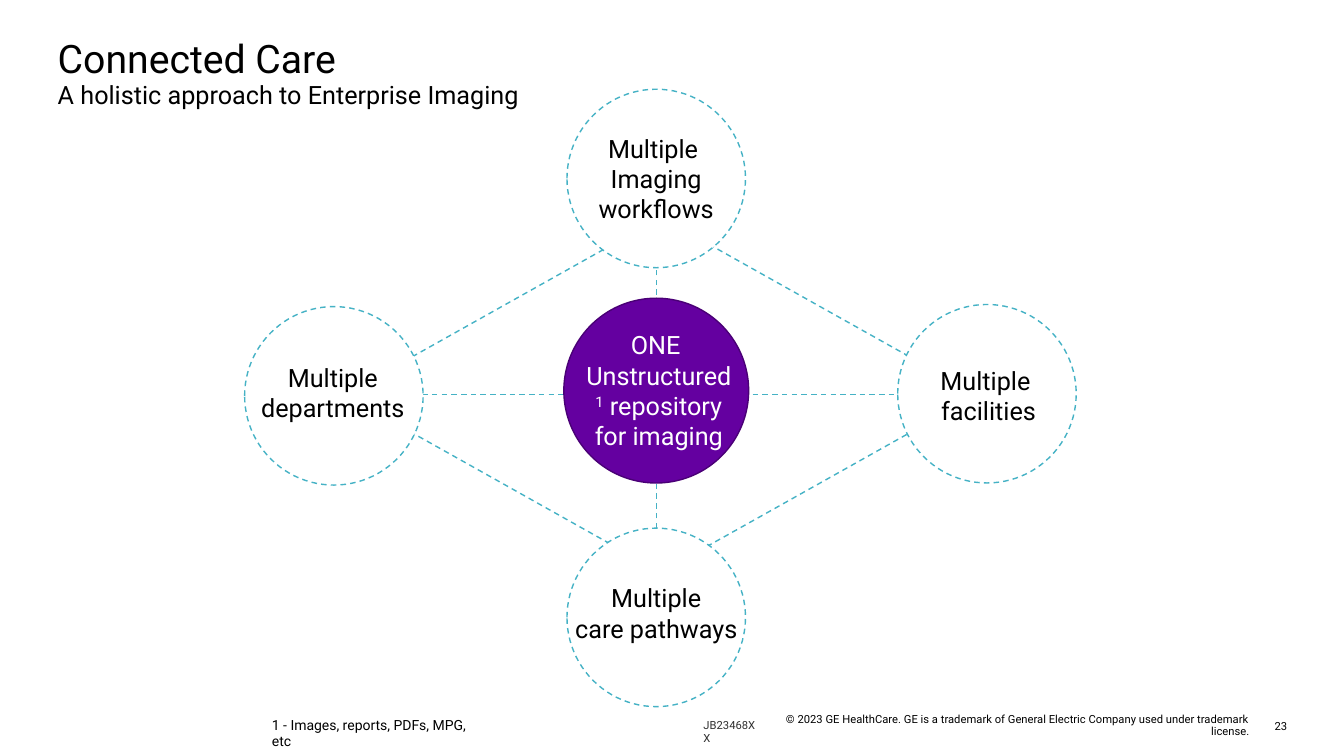
"""Build the Connected Care slide: one repository linked to four groups."""
from lxml.etree import SubElement
from pptx import Presentation
from pptx.dml.color import RGBColor
from pptx.enum.dml import MSO_LINE_DASH_STYLE as DASH
from pptx.enum.shapes import MSO_CONNECTOR as LINK, MSO_SHAPE as SHAPE
from pptx.enum.text import MSO_ANCHOR as ANCHOR, MSO_AUTO_SIZE as FIT, PP_ALIGN as ALIGN
from pptx.oxml.ns import qn
from pptx.util import Emu, Pt

COLORS = {"ink": "000000", "white": "FFFFFF", "teal": "45B2C5",
          "purple": "6400A0", "plum": "4A0076", "gray": "303030"}
NODE_SIZE = 170
NODES = [
    ((233, 292), ["Multiple", "departments"], (235, 345, 164, 59)),
    ((540, 85), ["Multiple ", "Imaging workflows"], (533, 127, 184, 87)),
    ((855, 290), ["Multiple ", "facilities"], (874, 348, 135, 59)),
    ((540, 503), ["Multiple", "care pathways"], (511, 555, 228, 59)),
]


def px(count):
    return Emu(count * 9525)


def color(name):
    return RGBColor.from_string(COLORS[name])


def write(para, text, *, size=18, ink="ink", font="Roboto", baseline=0):
    span = para.add_run()
    span.text = text
    span.font.name = font
    span.font.size = Pt(size)
    span.font.color.rgb = color(ink)
    if baseline:
        span.font._element.set("baseline", str(baseline * 1000))
    return span


class Painter:
    def __init__(self, page, dash=DASH.DASH, weight=1):
        self.page = page
        self.dash = dash
        self.weight = Pt(weight)

    def outline(self, line, ink, dashed=True):
        line.color.rgb = color(ink)
        line.width = self.weight
        if dashed:
            line.dash_style = self.dash

    def frame(self, box, inset=0, anchor=ANCHOR.TOP):
        frame = box.text_frame
        frame.word_wrap = True
        frame.auto_size = FIT.NONE
        frame.vertical_anchor = anchor
        frame.margin_left = frame.margin_right = px(inset)
        frame.margin_top = frame.margin_bottom = px(inset // 2)
        return frame

    def title(self, area, heading, subtitle):
        box = self.page.shapes.title
        box.left, box.top, box.width, box.height = map(px, area)
        para = self.frame(box).paragraphs[0]
        para.alignment = ALIGN.LEFT
        para.line_spacing = 0.9
        write(para, heading, size=28)
        para.add_line_break()
        write(para, subtitle)

    def shape(self, kind, area, fill=None, line="teal", dashed=True):
        shape = self.page.shapes.add_shape(kind, *map(px, area))
        shape.shadow.inherit = False
        if fill:
            shape.fill.solid()
            shape.fill.fore_color.rgb = color(fill)
        else:
            shape.fill.background()
        self.outline(shape.line, line, dashed)
        return shape

    def text(self, area, lines, align=ALIGN.LEFT, inset=0,
             anchor=ANCHOR.TOP, spacing=None, **style):
        box = self.page.shapes.add_textbox(*map(px, area))
        frame = self.frame(box, inset, anchor)
        for index, words in enumerate(lines):
            para = frame.add_paragraph() if index else frame.paragraphs[0]
            para.alignment = align
            para.line_spacing = spacing
            write(para, words, **style)
        return frame

    def link(self, start, end):
        line = self.page.shapes.add_connector(LINK.STRAIGHT, *map(px, start + end))
        self.outline(line.line, "teal")
        SubElement(line._element.spPr, qn("a:effectLst"))
        return line


def main():
    deck = Presentation()
    deck.slide_width, deck.slide_height = px(1280), px(720)
    painter = Painter(deck.slides.add_slide(deck.slide_layouts[5]))

    painter.title((55, 38, 1170, 77), "Connected Care",
                  "A holistic approach to Enterprise Imaging")

    diamond = painter.shape(SHAPE.DIAMOND, (328, 207, 603, 338))
    across = painter.link((328, 376), (931, 376))
    across.begin_connect(diamond, 1)
    across.end_connect(diamond, 3)

    for corner, label, area in NODES:
        painter.shape(SHAPE.OVAL, (*corner, NODE_SIZE, NODE_SIZE), "white")
        painter.text(area, label, ALIGN.CENTER)

    painter.link((625, 503), (625, 255))
    painter.shape(SHAPE.OVAL, (537, 284, 176, 176), "purple", "plum", dashed=False)
    hub = painter.text((547, 309, 161, 126), ["ONE ", "Unstructured"],
                       ALIGN.CENTER, inset=10, ink="white")
    write(hub.paragraphs[1], "1", ink="white", baseline=30)
    write(hub.paragraphs[1], " repository for imaging", ink="white")

    painter.text((259, 682, 196, 16), ["1 - Images, reports, PDFs, MPG, etc"], size=10)
    painter.text((670, 684, 50, 13), ["JB23468XX"], size=8, ink="gray")
    painter.text((737, 678, 453, 27),
                 [" © 2023 GE HealthCare. GE is a trademark of General Electric "
                  "Company used under trademark license."],
                 ALIGN.RIGHT, anchor=ANCHOR.MIDDLE, spacing=0.9, size=8)
    painter.text((1202, 678, 24, 27), ["23"], ALIGN.RIGHT, anchor=ANCHOR.MIDDLE, size=8)

    deck.save("out.pptx")


if __name__ == "__main__":
    main()
